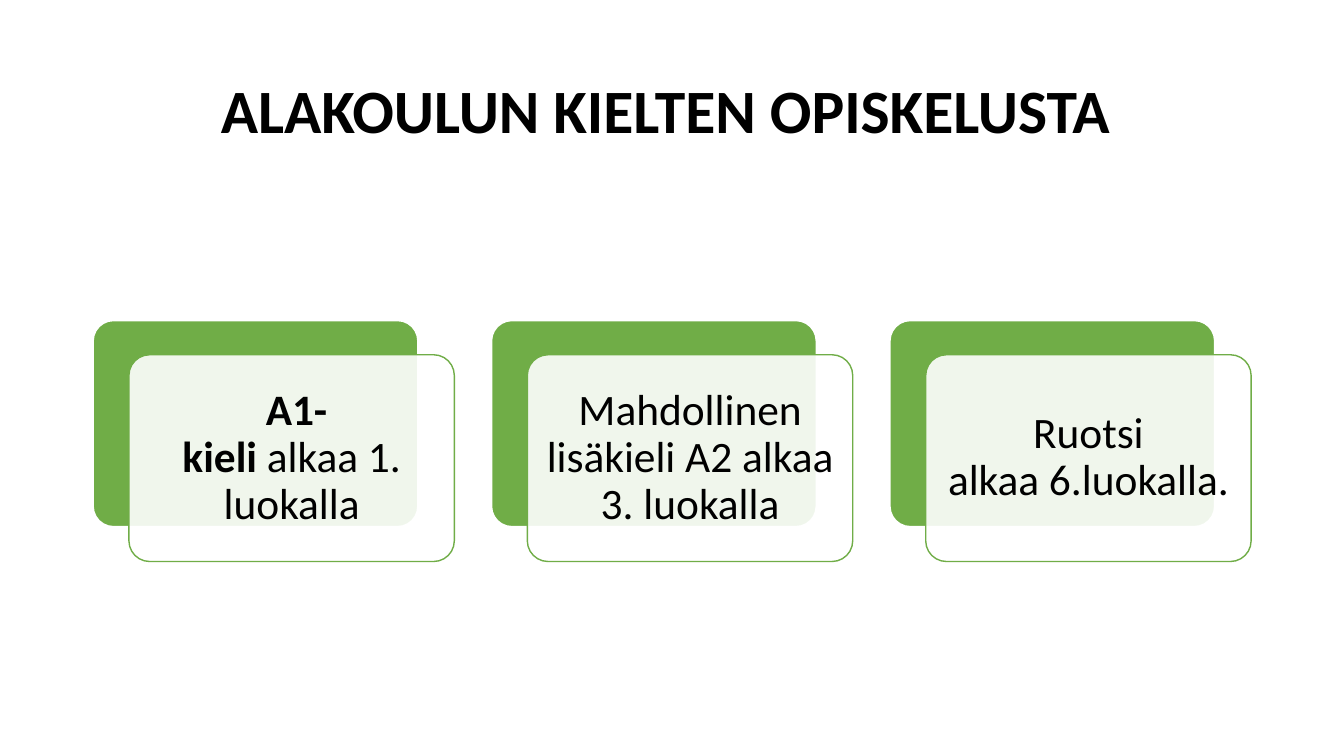
import dataclasses

import pptx
import pptx.dml.color
import pptx.enum.shapes
import pptx.enum.text
import pptx.oxml.ns
import pptx.util
from lxml import etree
from pptx.util import Cm


@dataclasses.dataclass(frozen=True)
class Theme:
    """Hold the colours, font and type sizes of the slide."""
    font: str = "Calibri"
    title_size: int = 44
    label_size: int = 31
    text: str = "000000"
    accent: str = "70AD47"
    paper: str = "FFFFFF"


THEME = Theme()
HARD_SPACE = chr(160)
STEPS = [
    [(f"{HARD_SPACE}A1-kieli{HARD_SPACE}", True), (f"alkaa{HARD_SPACE}1. luokalla", False)],
    [("Mahdollinen lisäkieli A2 alkaa 3. luokalla", False)],
    [(f"Ruotsi alkaa{HARD_SPACE}6.luokalla.", False)],
]
FIRST_LEFT, TOP, PITCH = Cm(2.34), Cm(8.07), Cm(10.04)
CARD_WIDTH, CARD_HEIGHT = Cm(8.2), Cm(5.21)
SHIFT_X, SHIFT_Y = Cm(0.91), Cm(0.87)
LABEL_MARGIN, LABEL_INSET = Cm(0.15), Cm(0.33)


def color(value):
    """Turn a hexadecimal value into a colour."""
    return pptx.dml.color.RGBColor.from_string(value)


def format_run(run, size, bold):
    """Apply the theme font to a run."""
    run.font.name = THEME.font
    run.font.size = pptx.util.Pt(size)
    run.font.bold = bold
    run.font.color.rgb = color(THEME.text)


def set_title(slide, text):
    """Place and format the slide title."""
    title = slide.shapes.title
    title.left, title.top, title.width, title.height = Cm(5.31), Cm(1.02), Cm(26.21), Cm(3.68)
    frame = title.text_frame
    frame.text = text
    frame.auto_size = pptx.enum.text.MSO_AUTO_SIZE.NONE
    frame.vertical_anchor = pptx.enum.text.MSO_ANCHOR.MIDDLE
    paragraph = frame.paragraphs[0]
    paragraph.alignment = pptx.enum.text.PP_ALIGN.LEFT
    paragraph.line_spacing = 0.9
    format_run(paragraph.runs[0], THEME.title_size, True)


def add_card(slide, left, top, fill, line, line_width):
    """Add one rounded card and return it."""
    card = slide.shapes.add_shape(
        pptx.enum.shapes.MSO_SHAPE.ROUNDED_RECTANGLE, left, top, CARD_WIDTH, CARD_HEIGHT)
    card.adjustments[0] = 0.1
    card.shadow.inherit = False
    card.fill.solid()
    card.fill.fore_color.rgb = color(fill)
    card.line.color.rgb = color(line)
    card.line.width = pptx.util.Pt(line_width)
    return card


def set_opacity(shape, percent):
    """Make the solid fill of a shape partly transparent."""
    fill_color = shape.fill._xPr.find(pptx.oxml.ns.qn("a:solidFill"))[0]
    etree.SubElement(fill_color, pptx.oxml.ns.qn("a:alpha"), val=str(percent * 1000))


def add_label(slide, card, parts):
    """Add centred text over a card."""
    label = slide.shapes.add_textbox(
        card.left + LABEL_MARGIN, card.top + LABEL_MARGIN,
        card.width - 2 * LABEL_MARGIN, card.height - 2 * LABEL_MARGIN)
    frame = label.text_frame
    frame.word_wrap = True
    frame.vertical_anchor = pptx.enum.text.MSO_ANCHOR.MIDDLE
    frame.margin_left = frame.margin_right = LABEL_INSET
    frame.margin_top = frame.margin_bottom = LABEL_INSET
    paragraph = frame.paragraphs[0]
    paragraph.alignment = pptx.enum.text.PP_ALIGN.CENTER
    paragraph.line_spacing = 0.9
    for text, bold in parts:
        run = paragraph.add_run()
        run.text = text
        format_run(run, THEME.label_size, bold)


def add_step(slide, left, parts):
    """Add a green card, a pale card shifted over it, and its text."""
    add_card(slide, left, TOP, THEME.accent, THEME.paper, 1.5)
    front = add_card(slide, left + SHIFT_X, TOP + SHIFT_Y, THEME.paper, THEME.accent, 1)
    set_opacity(front, 90)
    add_label(slide, front, parts)


def main():
    """Build the slide and save it."""
    presentation = pptx.Presentation()
    presentation.slide_width, presentation.slide_height = Cm(33.87), Cm(19.05)
    slide = presentation.slides.add_slide(presentation.slide_layouts.get_by_name("Title Only"))
    set_title(slide, "ALAKOULUN KIELTEN OPISKELUSTA")
    for index, parts in enumerate(STEPS):
        add_step(slide, FIRST_LEFT + index * PITCH, parts)
    presentation.save("out.pptx")


if __name__ == "__main__":
    main()
